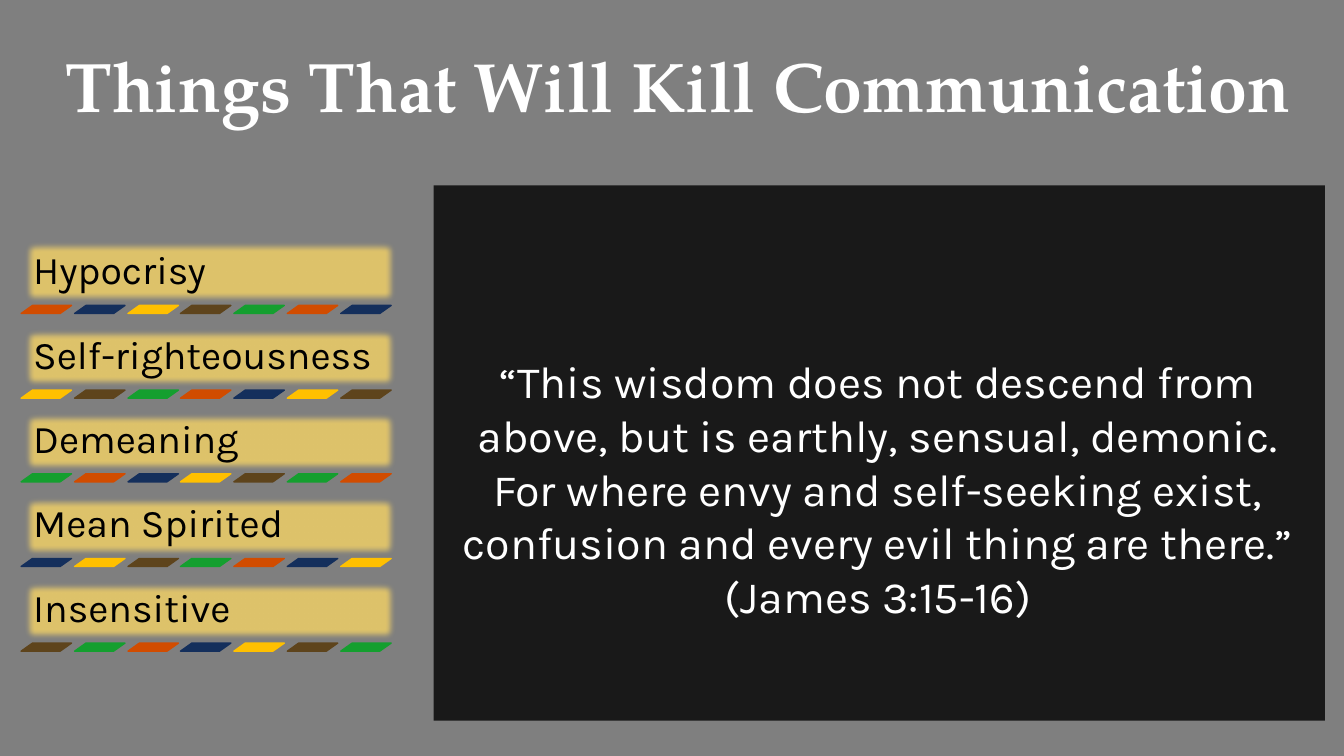
from dataclasses import dataclass

from lxml import etree
from pptx import Presentation
from pptx.dml.color import RGBColor
from pptx.enum.shapes import MSO_SHAPE as Shape
from pptx.enum.text import MSO_ANCHOR as Anchor, PP_ALIGN as Align
from pptx.oxml.ns import qn
from pptx.util import Emu, Pt

PX = 9144  # one px is a hundredth of an inch
SLIDE_W, SLIDE_H = 1333, 750

BLACK = RGBColor(0x00, 0x00, 0x00)
WHITE = RGBColor(0xFF, 0xFF, 0xFF)
CARD_YELLOW = RGBColor(0xFF, 0xD9, 0x66)
ORANGE = RGBColor(0xD1, 0x4C, 0x00)
NAVY = RGBColor(0x14, 0x2F, 0x5C)
GOLD = RGBColor(0xFF, 0xC0, 0x00)
BROWN = RGBColor(0x5E, 0x44, 0x1C)
GREEN = RGBColor(0x14, 0x9F, 0x2F)
DASH_COLORS = (ORANGE, NAVY, GOLD, BROWN, GREEN)

KILLERS = ("Hypocrisy", "Self-righteousness", "Demeaning", "Mean Spirited", "Insensitive")
QUOTE = ("“This wisdom does not descend from above, but is earthly, sensual, demonic. "
         "For where envy and self-seeking exist, confusion and every evil thing are there.” "
         "(James 3:15-16)")

LIST_LEFT, LIST_WIDTH = 21, 374
FIRST_STRIPE, STRIPE_PITCH = 303, 83.7
DASHES, DASH_PITCH, DASH_W, DASH_H = 7, 52.8, 50, 8
SOFT_EDGE = 63500


@dataclass(frozen=True)
class Box:
    left: int
    top: int
    width: int
    height: int

    def emu(self) -> tuple:
        return tuple(Emu(v * PX) for v in (self.left, self.top, self.width, self.height))


@dataclass(frozen=True)
class Style:
    font: dict
    color: RGBColor
    paragraph: dict
    anchor: Anchor
    margins: tuple  # left, top, right, bottom in px


TITLE = Style({"name": "TeX Gyre Pagella", "size": Pt(50), "bold": True}, WHITE,
              {"alignment": Align.CENTER, "line_spacing": 0.9}, Anchor.BOTTOM, (0, 0, 0, 0))
VERSE = Style({"name": "Karla", "size": Pt(32)}, WHITE,
              {"alignment": Align.CENTER}, Anchor.TOP, (10, 166, 10, 5))
LABEL = Style({"name": "Karla", "size": Pt(28)}, BLACK,
              {"alignment": Align.LEFT, "line_spacing": 0.9, "space_after": Pt(24)},
              Anchor.BOTTOM, (12, 12, 12, 12))


def set_all(target, values: dict) -> None:
    for name, value in values.items():
        setattr(target, name, value)


def add_panel(shapes, box: Box, color: RGBColor, opacity: int, soft: bool = False) -> None:
    panel = shapes.add_shape(Shape.RECTANGLE, *box.emu())
    panel.shadow.inherit = False
    panel.line.fill.background()
    panel.fill.solid()
    panel.fill.fore_color.rgb = color
    properties = panel._element.spPr
    tint = properties.find(qn("a:solidFill")).find(qn("a:srgbClr"))
    etree.SubElement(tint, qn("a:alpha")).set("val", str(opacity * 1000))
    if soft:
        effects = properties.find(qn("a:effectLst"))
        etree.SubElement(effects, qn("a:softEdge")).set("rad", str(SOFT_EDGE))


def add_text(shapes, box: Box, words: str, style: Style) -> None:
    frame = shapes.add_textbox(*box.emu()).text_frame
    sides = ("margin_left", "margin_top", "margin_right", "margin_bottom")
    set_all(frame, {"word_wrap": True, "vertical_anchor": style.anchor})
    set_all(frame, {side: Emu(px * PX) for side, px in zip(sides, style.margins)})
    paragraph = frame.paragraphs[0]
    set_all(paragraph, style.paragraph)
    run = paragraph.add_run()
    run.text = words
    set_all(run.font, style.font)
    run.font.color.rgb = style.color


def add_dash(shapes, box: Box, color: RGBColor) -> None:
    dash = shapes.add_shape(Shape.PARALLELOGRAM, *box.emu())
    dash.adjustments[0] = 1.41
    dash.shadow.inherit = False
    dash.fill.solid()
    dash.fill.fore_color.rgb = color
    dash.line.color.rgb = color
    dash.line.width = Pt(1)


def add_killer(shapes, row: int, label: str) -> None:
    stripe_top = round(FIRST_STRIPE + row * STRIPE_PITCH)
    height = 63 if row else 66
    card = Box(LIST_LEFT, stripe_top - height, LIST_WIDTH, height)
    add_panel(shapes, card, CARD_YELLOW, 75, soft=True)
    add_text(shapes, card, label, LABEL)
    # Each stripe starts two colours further along the cycle
    for column in range(DASHES):
        left = round(LIST_LEFT + column * DASH_PITCH)
        color = DASH_COLORS[(2 * row + column) % len(DASH_COLORS)]
        add_dash(shapes, Box(left, stripe_top, DASH_W, DASH_H), color)


def main() -> None:
    deck = Presentation()
    deck.slide_width, deck.slide_height = Emu(SLIDE_W * PX), Emu(SLIDE_H * PX)
    slide = deck.slides.add_slide(deck.slide_layouts[6])
    slide.background.fill.solid()
    slide.background.fill.fore_color.rgb = WHITE

    # Grey veil and dark verse panel
    add_panel(slide.shapes, Box(0, 0, SLIDE_W, SLIDE_H), BLACK, 50)
    add_panel(slide.shapes, Box(430, 184, 884, 531), BLACK, 80)

    # Title and verse
    add_text(slide.shapes, Box(38, 26, 1270, 101), "Things That Will Kill Communication", TITLE)
    add_text(slide.shapes, Box(435, 185, 872, 524), QUOTE, VERSE)

    # List of communication killers
    killers = slide.shapes.add_group_shape()
    for row, label in enumerate(KILLERS):
        add_killer(killers.shapes, row, label)

    deck.save("out.pptx")


if __name__ == "__main__":
    main()
